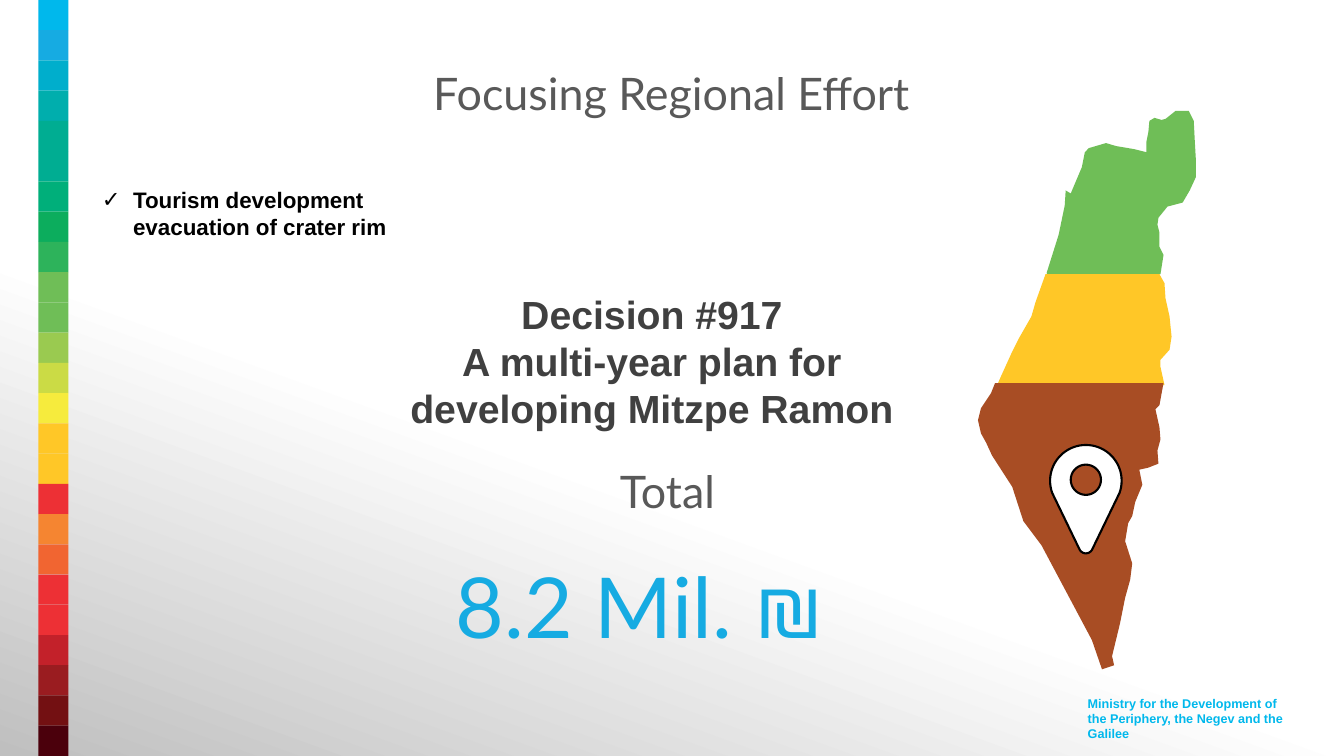
from math import cos, radians, sin

from lxml import etree
from pptx import Presentation
from pptx.dml.color import RGBColor
from pptx.enum.shapes import MSO_SHAPE
from pptx.enum.text import MSO_ANCHOR, MSO_AUTO_SIZE, PP_ALIGN
from pptx.oxml.ns import qn
from pptx.util import Inches, Pt

RECTANGLE = MSO_SHAPE.RECTANGLE
TOP = MSO_ANCHOR.TOP
NO_AUTOFIT = MSO_AUTO_SIZE.NONE
LEFT, CENTER = PP_ALIGN.LEFT, PP_ALIGN.CENTER

CELL = Inches(0.1)
STRIPE = 3
BLUE = "16ABE2"
HEADING = {"name": "Lato", "size": Pt(32), "bold": False}
AMOUNT = {"name": "Lato", "size": Pt(60), "bold": False}
DECISION = {"name": "Arial", "size": Pt(28), "bold": True}
BULLET = {"name": "Arial", "size": Pt(16), "bold": True}
MINISTRY = {"name": "Arial", "size": Pt(9), "bold": True}

STRIPES = """00B8EC 16ABE2 00AECC 00AEAD 00AD92 00AD92 00AF7A 0CAD5D 2DB35B
6FBE57 6FBE57 9ACA50 CBDB45 F6EB3D FFC727 FFC727 ED3035 F58531 F16531
ED3035 ED3035 C3212A 9A1C20 731012 4B000C""".split()

NORTH = [
    (117.9, 11), (116.6, 11), (115.6, 11.8), (115.2, 11.9), (114.5, 11.7), (114, 12),
    (113.9, 13.1), (113.7, 14.1), (113.7, 15.1), (112.5, 14.8), (110.7, 14.5),
    (109.7, 14.2), (108, 14.7), (107.6, 15.1), (107.3, 16.6), (106.2, 19.2),
    (105.7, 18.9), (105.6, 20.4), (105, 23.3), (103.8, 27.1), (104, 27.3),
    (115.1, 27.2), (115.4, 25.3), (115, 24.5), (115, 23.1), (114.8, 22.3),
    (114.9, 21.6), (115.8, 20.5), (117.3, 20.1), (118, 18.9), (118.6, 17.6),
    (118.6, 15.7), (118.5, 13.9), (118.4, 12),
]
CENTRE = [
    (98.9, 38.2), (115.5, 38.2), (115.1, 36.4), (115.1, 35.7), (116, 34.7),
    (116.2, 33.4), (116, 31.4), (115.6, 29.6), (115.5, 28.1), (115, 27.2),
    (103.7, 27.2), (102.7, 30), (102.3, 31.4), (101.1, 33.5), (100.3, 35.1), (99.3, 37.3),
]
SOUTH = [
    (110.5, 66), (109.3, 66.4), (108.3, 63.5), (103.3, 54.1), (101.5, 51.7),
    (100.4, 48.3), (98.4, 45.2), (97.8, 43.9), (97.3, 43), (97, 41.7), (97.3, 40.5),
    (98.3, 39), (98.7, 38), (115.4, 38), (115, 40.2), (114.6, 40.6), (115, 42.4),
    (115.1, 43.6), (114.8, 44.7), (114.9, 46), (113.9, 46.4), (113, 46.6),
    (113.3, 48.1), (112.6, 49.8), (112.3, 51.2), (111.9, 51.9), (111.6, 53.7),
    (112.3, 55.9), (112.1, 57.5), (111.6, 59.3), (111.1, 61.8), (110.3, 65.1),
]
REGIONS = [(NORTH, "6FBE57"), (CENTRE, "FFC727"), (SOUTH, "A84D24")]


def color(value):
    return RGBColor.from_string(value)


def cells(*values):
    return [round(value * CELL) for value in values]


def arc(column, row, radius, start, end, step):
    return [(column + radius * cos(radians(angle)), row + radius * sin(radians(angle)))
            for angle in range(start, end + 1, step)]


class SlideBuilder:
    def __init__(self, slide):
        self.slide = slide

    def background(self, stops, angle):
        fill = self.slide.background.fill
        fill.gradient()
        fill.gradient_angle = angle
        for stop, (position, value) in zip(fill.gradient_stops, stops):
            stop.position = position
            stop.color.rgb = color(value)

    def paint(self, shape, fill, line=None):
        shape.shadow.inherit = False
        shape.fill.solid()
        shape.fill.fore_color.rgb = color(fill)
        if line:
            shape.line.color.rgb = color(line)
            shape.line.width = Pt(1.5)
        else:
            shape.line.fill.background()

    def rectangle(self, box, fill):
        self.paint(self.slide.shapes.add_shape(RECTANGLE, *cells(*box)), fill)

    def outline(self, contours, fill, line=None):
        first, *others = [[cells(*point) for point in contour] for contour in contours]
        builder = self.slide.shapes.build_freeform(*first[0])
        builder.add_line_segments(first[1:], close=True)
        for contour in others:
            builder.move_to(*contour[0])
            builder.add_line_segments(contour[1:], close=True)
        self.paint(builder.convert_to_shape(), fill, line)

    def fill_text(self, shape, box, lines, style, value, alignment=CENTER, wrap=True):
        shape.left, shape.top, shape.width, shape.height = cells(*box)
        frame = shape.text_frame
        frame.text = "\n".join(lines)
        settings = {"word_wrap": wrap, "vertical_anchor": TOP, "auto_size": NO_AUTOFIT}
        for name, setting in settings.items():
            setattr(frame, name, setting)
        for paragraph in frame.paragraphs:
            paragraph.alignment = alignment
            paragraph.space_before = Pt(0)
            font = paragraph.runs[0].font
            font.color.rgb = color(value)
            for name, setting in style.items():
                setattr(font, name, setting)

    def text(self, box, *arguments, **options):
        shape = self.slide.shapes.add_textbox(*cells(*box))
        self.fill_text(shape, box, *arguments, **options)

    def title(self, box, *arguments, **options):
        self.fill_text(self.slide.shapes.title, box, *arguments, **options)

    def bullets(self, box, lines, style, value, mark, indent):
        body = self.slide.placeholders[1]
        self.fill_text(body, box, lines, style, value, alignment=LEFT)
        for paragraph in body.text_frame.paragraphs:
            properties = paragraph._p.get_or_add_pPr()
            properties.set("marL", str(indent))
            properties.set("indent", str(-indent))
            etree.SubElement(properties, qn("a:buChar")).set("char", mark)


def main():
    presentation = Presentation()
    presentation.slide_width = Inches(13.33)
    presentation.slide_height = Inches(7.5)
    builder = SlideBuilder(presentation.slides.add_slide(presentation.slide_layouts[1]))
    builder.background([(0.6, "FFFFFF"), (1, "BFBFBF")], 250)

    builder.text((106.9, 68.5, 21.7, 5.6),
                 ["Ministry for the Development of the Periphery, the Negev and the Galilee"],
                 MINISTRY, "00B8EC", alignment=LEFT)
    for index, value in enumerate(STRIPES):
        builder.rectangle((3.8, index * STRIPE, STRIPE, STRIPE), value)

    builder.title((41.7, 6, 49.8, 6.4), ["Focusing Regional Effort"],
                  HEADING, "595959", wrap=False)
    builder.text((41.2, 54.5, 44.6, 11.1), ["8.2 Mil. ₪"], AMOUNT, BLUE, wrap=False)
    builder.text((34.5, 28.3, 60.3, 15.1),
                 ["Decision #917", "A multi-year plan for developing Mitzpe Ramon"],
                 DECISION, "404040")
    builder.text((60.4, 45.5, 11.6, 6.4), ["Total"], HEADING, "595959", wrap=False)

    for region, value in REGIONS:
        builder.outline([region], value)
    pin = arc(107.7, 47.7, 3.55, 160, 380, 5) + arc(107.7, 54.2, 0.7, 25, 155, 10)
    hole = arc(107.7, 47.6, 1.5, 0, 350, 10)[::-1]
    builder.outline([pin, hole], "FFFFFF", "000000")

    builder.bullets((9.1, 18, 37.7, 6.4), ["Tourism development evacuation of crater rim"],
                    BULLET, "000000", "✓", Inches(0.31))
    presentation.save("out.pptx")


if __name__ == "__main__":
    main()
